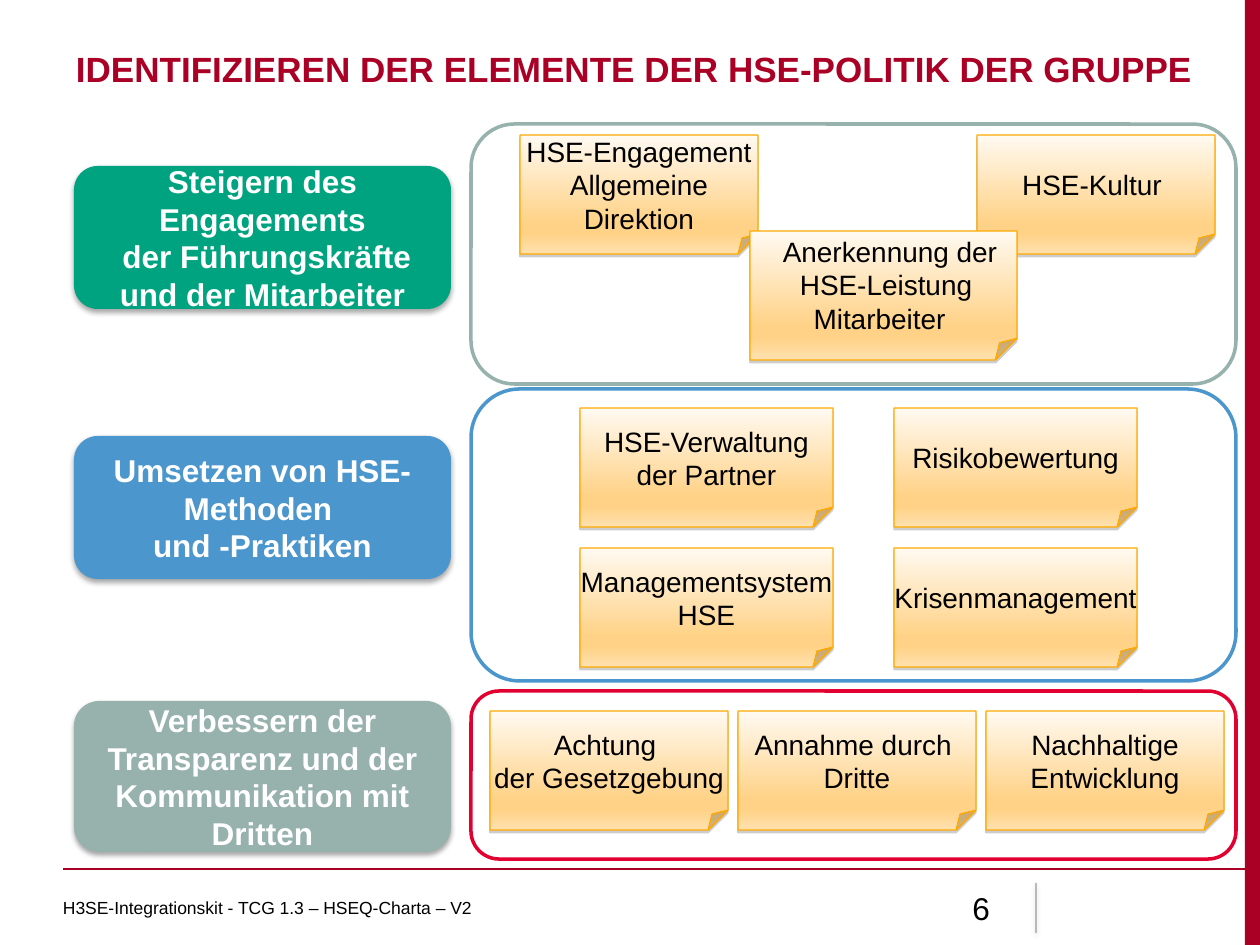
from pptx import Presentation
from pptx.dml.color import RGBColor
from pptx.enum.shapes import MSO_CONNECTOR, MSO_SHAPE
from pptx.enum.text import MSO_ANCHOR, PP_ALIGN
from pptx.oxml.ns import qn
from pptx.util import Pt
from lxml.etree import SubElement

PX = 914400 / 126
HEX = {
    "wine": "AA0025", "red": "E20031", "blue": "4A96CD", "sage": "97B2AD",
    "green": "00A37F", "amber": "FFAA00", "gray": "808080",
    "cream": "FFFAF2", "gold": "FFD287", "sand": "FFE1AF",
    "black": "000000", "white": "FFFFFF",
}
FADE = [(0, "cream"), (74, "gold"), (83, "gold"), (100, "sand")]
NOTE_W, NOTE_H = 238, 119

# Each band: panel top and height, line colour; label top, height, fill, text;
# notes as left, top, width, height (within the panel) and text
BANDS = [
    (124, 260, "sage", (166, 143, "green",
     "Steigern des Engagements\n der Führungskräfte und der Mitarbeiter"), [
        (49, 11, NOTE_W, NOTE_H, "HSE-Engagement\nAllgemeine Direktion"),
        (506, 11, NOTE_W, NOTE_H, "HSE-Kultur "),
        (279, 107, 267, 129,
         "Anerkennung der HSE-Leistung \nMitarbeiter "),
    ]),
    (389, 292, "blue", (436, 143, "blue",
     "Umsetzen von HSE-Methoden \nund -Praktiken"), [
        (109, 19, 253, NOTE_H, "HSE-Verwaltung\n der Partner "),
        (423, 19, 243, NOTE_H, "Risikobewertung"),
        (109, 159, 253, NOTE_H, "Managementsystem \nHSE"),
        (423, 159, 243, NOTE_H, "Krisenmanagement"),
    ]),
    (691, 168, "red", (701, 151, "sage",
     "Verbessern der Transparenz und der Kommunikation mit Dritten"), [
        (19 + 248 * i, 20, NOTE_W, NOTE_H, text) for i, text in enumerate([
            "Achtung \vder Gesetzgebung",
            "Annahme durch \vDritte",
            "Nachhaltige Entwicklung"])
    ]),
]


def emu(*sizes):
    return [round(size * PX) for size in sizes]


def tint(name):
    return RGBColor.from_string(HEX[name])


def shade(shape, name, alpha, blur, dist):
    """Drop a shadow straight down."""
    props = shape._element.spPr
    effects = props.find(qn("a:effectLst"))
    if effects is None:
        effects = SubElement(props, qn("a:effectLst"))
    drop = SubElement(effects, qn("a:outerShdw"), blurRad=str(Pt(blur)),
                      dist=str(Pt(dist)), dir="5400000", rotWithShape="0")
    color = SubElement(drop, qn("a:srgbClr"), val=HEX[name])
    SubElement(color, qn("a:alpha"), val=str(alpha * 1000))


def write(shape, text, size, color="black", bold=False,
          align=PP_ALIGN.CENTER, anchor=MSO_ANCHOR.MIDDLE, pad=(13, 6, 13, 6)):
    frame = shape.text_frame
    frame.text = text
    left, top, right, bottom = emu(*pad)
    form = {"word_wrap": True, "vertical_anchor": anchor,
            "margin_left": left, "margin_top": top,
            "margin_right": right, "margin_bottom": bottom}
    for key, value in form.items():
        setattr(frame, key, value)
    for para in frame.paragraphs:
        para.alignment = align
        para.font.color.rgb = tint(color)
        for key, value in {"name": "Arial", "size": Pt(size),
                           "bold": bold}.items():
            setattr(para.font, key, value)


def draw(slide, kind, box, fill=None, line=None, width=1):
    shape = slide.shapes.add_shape(kind, *emu(*box))
    shape.shadow.inherit = False
    if fill:
        shape.fill.solid()
        shape.fill.fore_color.rgb = tint(fill)
    if line:
        shape.line.color.rgb = tint(line)
        shape.line.width = Pt(width)
    else:
        shape.line.fill.background()
    return shape


def rule(slide, ends, color, width):
    line = slide.shapes.add_connector(MSO_CONNECTOR.STRAIGHT, *emu(*ends))
    line.line.color.rgb = tint(color)
    line.line.width = Pt(width)
    SubElement(line._element.spPr, qn("a:effectLst"))
    return line


def note(slide, box, text):
    """Sticky note with a folded corner and a four-stop fade."""
    shape = draw(slide, MSO_SHAPE.FOLDED_CORNER, box, line="amber", width=0.75)
    shape.fill.gradient()
    shape.fill.gradient_angle = 270
    stops = shape._element.spPr.find(qn("a:gradFill")).find(qn("a:gsLst"))
    for stop in list(stops):
        stops.remove(stop)
    for pos, name in FADE:
        stop = SubElement(stops, qn("a:gs"), pos=str(pos * 1000))
        SubElement(stop, qn("a:srgbClr"), val=HEX[name])
    shade(shape, "gray", 38, 0, 1.6)
    write(shape, text, 16, pad=(0, 5, 0, 5))
    return shape


def label(slide, box, fill, text):
    shape = draw(slide, MSO_SHAPE.ROUNDED_RECTANGLE, box, fill)
    shade(shape, "black", 35, 3.1, 1.8)
    write(shape, text, 18, "white", True)


def panel(slide, box, color, notes):
    left, top, _, _ = box
    draw(slide, MSO_SHAPE.ROUNDED_RECTANGLE, box, "white", color, 2)
    for x, y, w, h, text in notes:
        shape = note(slide, (left + x, top + y, w, h), text)
        if text.startswith("Anerkennung"):
            first = shape.text_frame.paragraphs[0]
            first._p.get_or_add_pPr().set("marL", str(emu(13)[0]))


def title(slide, box, text):
    shape = slide.shapes.add_textbox(*emu(*box))
    write(shape, text, 20, "wine", True, PP_ALIGN.LEFT, MSO_ANCHOR.TOP,
          (13, 10, 13, 6))


def footer(slide, box):
    left, top, width, _ = box
    rule(slide, (left, top, left + width, top), "wine", 0.75)
    # Faint divider beside the page number
    mark = rule(slide, (left + 973, top + 14, left + 973, top + 64),
                "black", 0.5)
    color = mark._element.spPr.find(".//" + qn("a:srgbClr"))
    SubElement(color, qn("a:alpha"), val="70000")
    shade(mark, "black", 38, 3.1, 1.6)
    # Page number and document name
    page = slide.shapes.add_textbox(*emu(left + 840, top + 14, 100, 50))
    write(page, "6", 18, align=PP_ALIGN.RIGHT)
    name = slide.shapes.add_textbox(*emu(left, top + 14, 766, 50))
    write(name, "H3SE-Integrationskit - TCG 1.3 – HSEQ-Charta – V2", 10,
          align=PP_ALIGN.LEFT, pad=(0, 6, 13, 6))


def main():
    deck = Presentation()
    deck.slide_width, deck.slide_height = emu(1260, 945)
    slide = deck.slides.add_slide(deck.slide_layouts[6])
    # Side bar
    draw(slide, MSO_SHAPE.RECTANGLE, (1245, 0, 15, 945), "wine")
    footer(slide, (63, 869, 1197, 76))
    title(slide, (63, 38, 1145, 87),
          "IDENTIFIZIEREN DER ELEMENTE DER HSE-POLITIK DER GRUPPE")
    # Themes with their notes
    for top, height, color, (y, h, fill, text), notes in BANDS:
        panel(slide, (471, top, 765, height), color, notes)
        label(slide, (74, y, 377, h), fill, text)
    deck.save("out.pptx")


if __name__ == "__main__":
    main()
